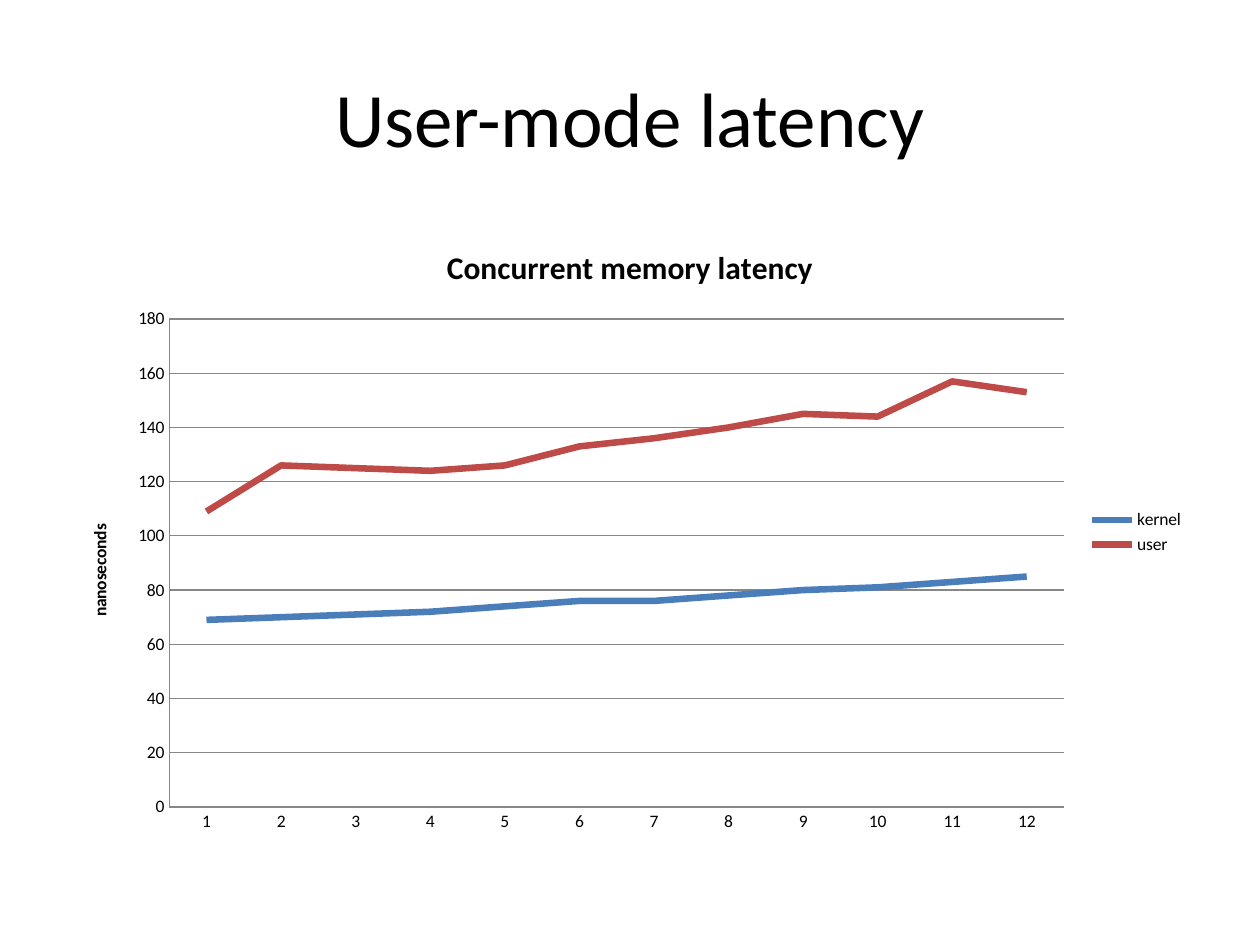
from dataclasses import dataclass

from pptx import Presentation
from pptx.chart import data
from pptx.dml import color
from pptx.enum import chart as ch, text
from pptx.util import Pt


@dataclass(frozen=True)
class Theme:
    font: str = "Calibri"
    ink: str = "000000"
    grid: str = "878787"
    kernel: str = "4A7EBB"
    user: str = "BE4B48"
    heading: int = 44
    chart_heading: int = 18
    label: int = 10


theme = Theme()


def rgb(code):
    return color.RGBColor.from_string(code)


def add_run(paragraph, words, size, bold=False):
    run = paragraph.add_run()
    run.text = words
    run.font.name = theme.font
    run.font.size = Pt(size)
    run.font.bold = bold
    run.font.color.rgb = rgb(theme.ink)


prs = Presentation()
prs.slide_width, prs.slide_height = Pt(720), Pt(540)
slide = prs.slides.add_slide(prs.slide_layouts[6])

# Heading
heading = slide.shapes.add_textbox(Pt(36), Pt(21.6), Pt(648), Pt(90)).text_frame
heading.word_wrap = True
heading.vertical_anchor = text.MSO_ANCHOR.MIDDLE
heading.paragraphs[0].alignment = text.PP_ALIGN.CENTER
add_run(heading.paragraphs[0], "User-mode latency", theme.heading)

# Kernel and user latency
latency = data.CategoryChartData()
latency.categories = [str(n) for n in range(1, 13)]
latency.add_series("kernel", [69, 70, 71, 72, 74, 76, 76, 78, 80, 81, 83, 85])
latency.add_series("user", [109, 126, 125, 124, 126, 133, 136, 140, 145, 144, 157, 153])
chart = slide.shapes.add_chart(
    ch.XL_CHART_TYPE.LINE, Pt(36), Pt(126), Pt(648), Pt(356.4), latency
).chart
chart.font.name = theme.font
chart.font.size = Pt(theme.label)
chart.font.color.rgb = rgb(theme.ink)

# Chart title and legend
chart.has_title = True
add_run(chart.chart_title.text_frame.paragraphs[0], "Concurrent memory latency",
        theme.chart_heading, bold=True)
chart.chart_title.include_in_layout = False
chart.has_legend = True
chart.legend.position = ch.XL_LEGEND_POSITION.RIGHT
chart.legend.include_in_layout = False

# Lines
plot = chart.plots[0]
plot.vary_by_categories = False
for series, shade in zip(plot.series, (theme.kernel, theme.user)):
    series.smooth = False
    series.marker.style = ch.XL_MARKER_STYLE.NONE
    series.format.line.color.rgb = rgb(shade)
    series.format.line.width = Pt(3.75)

# Axes
nanoseconds, categories = chart.value_axis, chart.category_axis
nanoseconds.minimum_scale, nanoseconds.maximum_scale = 0, 180
nanoseconds.major_unit = 20
nanoseconds.has_major_gridlines = True
add_run(nanoseconds.axis_title.text_frame.paragraphs[0], "nanoseconds",
        theme.label, bold=True)
for axis in (nanoseconds, categories):
    axis.major_tick_mark = axis.minor_tick_mark = ch.XL_TICK_MARK.NONE
for ruled in (nanoseconds, categories, nanoseconds.major_gridlines):
    ruled.format.line.color.rgb = rgb(theme.grid)
    ruled.format.line.width = Pt(0.75)

prs.save("out.pptx")
